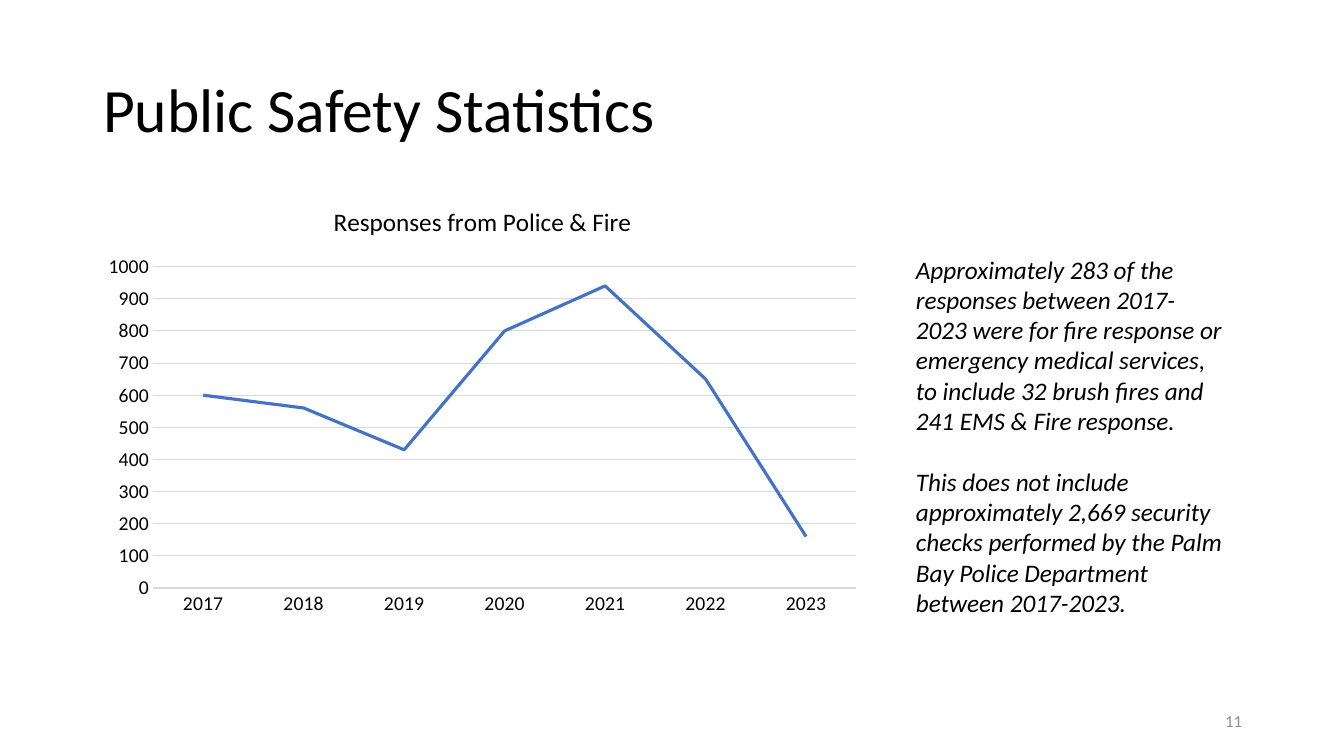
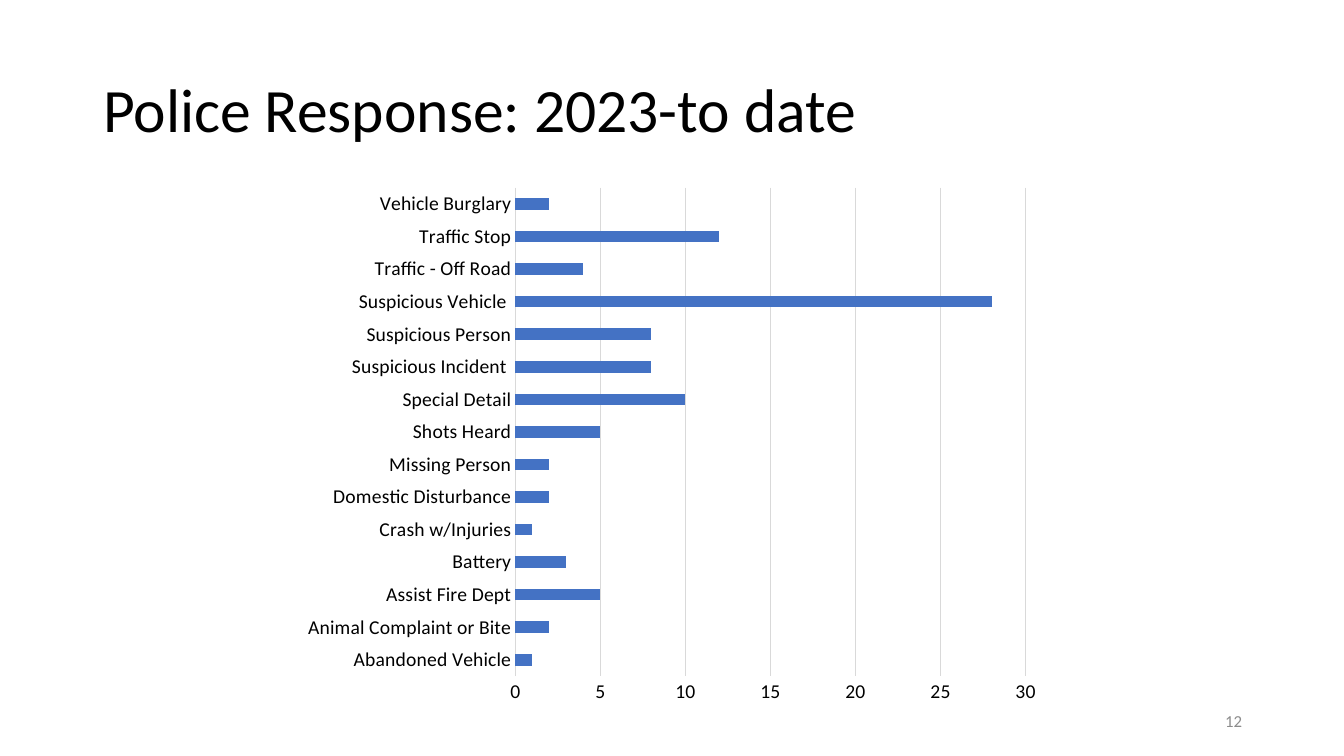
from pptx import Presentation
from pptx.chart.data import CategoryChartData
from pptx.dml.color import RGBColor
from pptx.enum.chart import XL_CHART_TYPE, XL_TICK_MARK
from pptx.enum.text import MSO_ANCHOR, PP_ALIGN
from pptx.util import Emu, Pt

WIDTH, HEIGHT = 1344, 756
EMU_PER_PX = 12192000 / WIDTH
FONT = "Calibri"
BLACK, GRAY, RULE, BLUE = "000000", "8C8C8C", "D9D9D9", "4472C4"

RESPONSES = {"2017": 600, "2018": 560, "2019": 430, "2020": 800,
             "2021": 940, "2022": 650, "2023": 160}
INCIDENTS = {
    "Abandoned Vehicle": 1,
    "Animal Complaint or Bite": 2,
    "Assist Fire Dept": 5,
    "Battery": 3,
    "Crash w/Injuries": 1,
    "Domestic Disturbance": 2,
    "Missing Person": 2,
    "Shots Heard": 5,
    "Special Detail": 10,
    "Suspicious Incident ": 8,
    "Suspicious Person": 8,
    "Suspicious Vehicle ": 28,
    "Traffic - Off Road": 4,
    "Traffic Stop": 12,
    "Vehicle Burglary": 2,
}
REMARKS = [
    "Approximately 283 of the responses between 2017-2023 were for fire response "
    "or emergency medical services, to include 32 brush fires and 241 EMS & Fire response.",
    "This does not include approximately 2,669 security checks performed by the "
    "Palm Bay Police Department between 2017-2023.",
]


def px(length):
    return Emu(round(length * EMU_PER_PX))


def color(value):
    return RGBColor.from_string(value)


class Deck:
    def __init__(self):
        self.deck = Presentation()
        self.deck.slide_width, self.deck.slide_height = px(WIDTH), px(HEIGHT)
        self.page = None

    def style(self, font, size, shade=BLACK, italic=False):
        font.name, font.size, font.italic = FONT, Pt(size), italic
        font.color.rgb = color(shade)

    def add_page(self, title, number):
        self.page = self.deck.slides.add_slide(self.deck.slide_layouts[5])
        box = self.page.shapes.title
        box.left, box.top, box.width, box.height = map(px, (93, 40, 1159, 146))
        box.text_frame.text = title
        box.text_frame.vertical_anchor = MSO_ANCHOR.MIDDLE
        para = box.text_frame.paragraphs[0]
        para.alignment, para.line_spacing = PP_ALIGN.LEFT, 0.9
        self.style(para.font, 44)
        self.add_text([str(number)], (950, 701, 302, 40), 12, GRAY,
                      align=PP_ALIGN.RIGHT, anchor=MSO_ANCHOR.MIDDLE)

    def add_text(self, lines, area, size, shade=BLACK, italic=False,
                 align=PP_ALIGN.LEFT, anchor=MSO_ANCHOR.TOP, gap=0):
        frame = self.page.shapes.add_textbox(*map(px, area)).text_frame
        frame.word_wrap, frame.vertical_anchor = True, anchor
        frame.text = "\n".join(lines)
        for index, para in enumerate(frame.paragraphs):
            para.alignment = align
            para.space_before = Pt(gap if index else 0)
            self.style(para.font, size, shade, italic)

    def add_chart(self, kind, values, area, top, step, title=None):
        data = CategoryChartData()
        data.categories = list(values)
        data.add_series("Series 1", list(values.values()))
        chart = self.page.shapes.add_chart(kind, *map(px, area), data).chart
        self.style(chart.font, 14)
        chart.has_legend = False
        chart.has_title = title is not None
        if title:
            frame = chart.chart_title.text_frame
            frame.text = title
            self.style(frame.paragraphs[0].font, 18)
            frame.paragraphs[0].font.bold = False
            chart.chart_title.include_in_layout = False
        self.style_axes(chart, top, step)
        return chart.plots[0]

    def style_axes(self, chart, top, step):
        for axis in (chart.category_axis, chart.value_axis):
            axis.major_tick_mark = axis.minor_tick_mark = XL_TICK_MARK.NONE
            self.style(axis.tick_labels.font, 14)
        scale = chart.value_axis
        scale.minimum_scale, scale.maximum_scale, scale.major_unit = 0, top, step
        scale.format.line.fill.background()
        scale.has_major_gridlines = True
        for line in (chart.category_axis.format.line, scale.major_gridlines.format.line):
            line.color.rgb, line.width = color(RULE), Pt(0.75)

    def add_line_chart(self, values, area, top, step, title):
        plot = self.add_chart(XL_CHART_TYPE.LINE, values, area, top, step, title)
        plot.vary_by_categories = False
        series = plot.series[0]
        series.smooth = False
        series.format.line.color.rgb = color(BLUE)
        series.format.line.width = Pt(2.25)

    def add_bar_chart(self, values, area, top, step):
        plot = self.add_chart(XL_CHART_TYPE.BAR_CLUSTERED, values, area, top, step)
        plot.vary_by_categories = False
        plot.gap_width = 182
        fill = plot.series[0].format.fill
        fill.solid()
        fill.fore_color.rgb = color(BLUE)


def main():
    deck = Deck()
    deck.add_page("Public Safety Statistics", 11)
    deck.add_line_chart(RESPONSES, (93, 186, 779, 439), 1000, 100,
                        "Responses from Police & Fire")
    deck.add_text(REMARKS, (906, 249, 328, 377), 18, italic=True, gap=22)

    deck.add_page("Police Response: 2023-to date", 12)
    deck.add_bar_chart(INCIDENTS, (293, 177, 758, 538), 30, 5)
    deck.deck.save("out.pptx")


if __name__ == "__main__":
    main()
